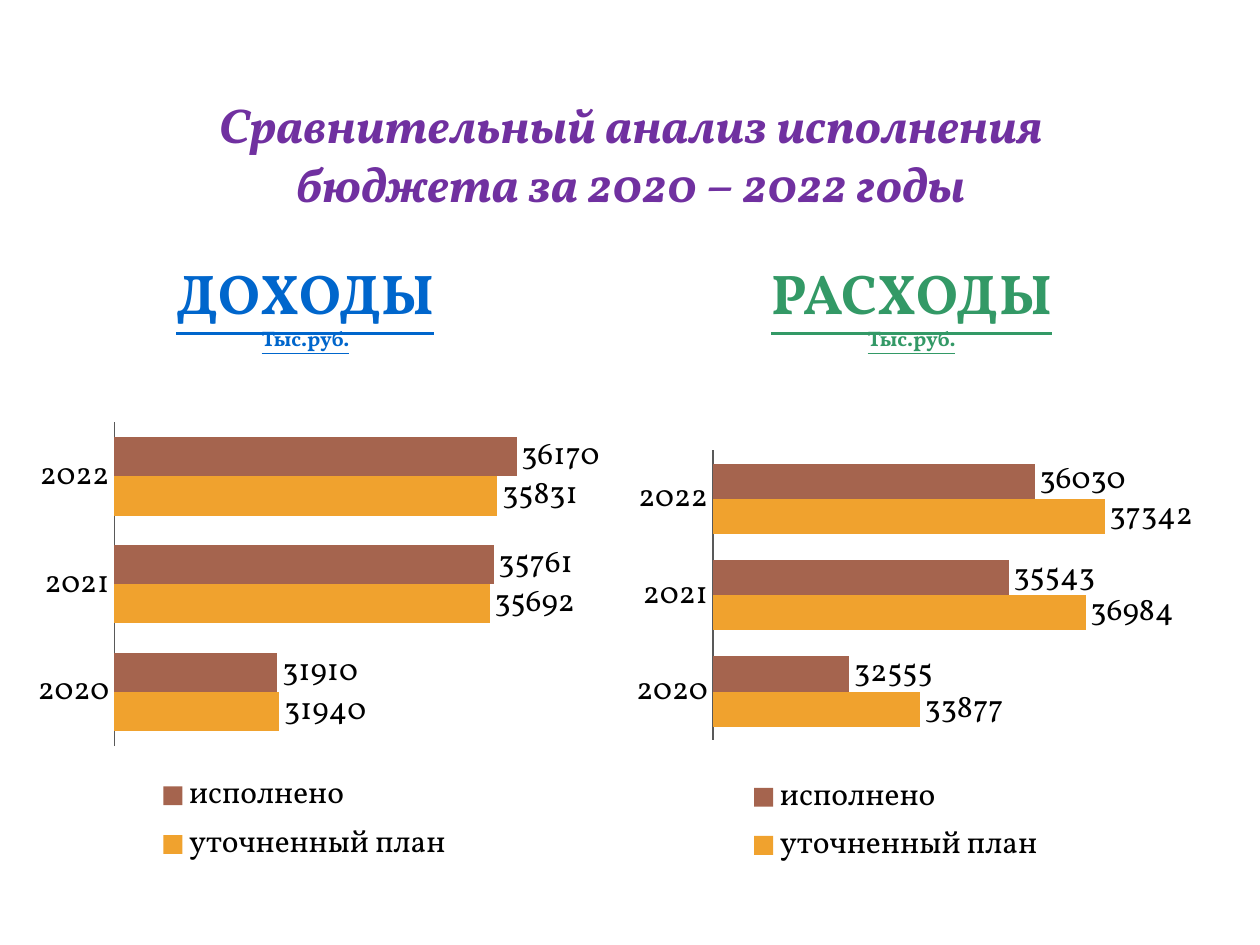
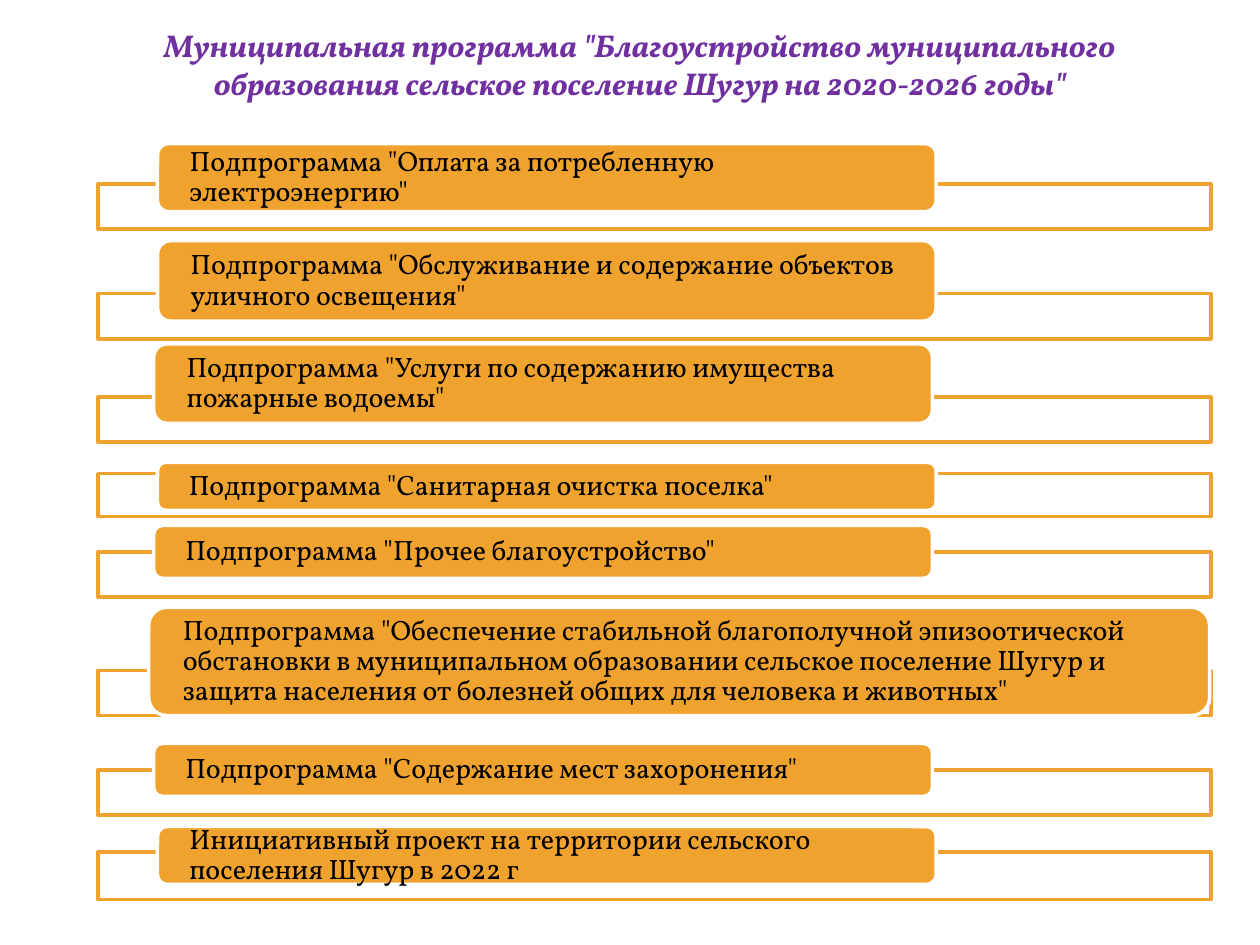
"""Budget comparison charts and the list of municipal subprogrammes."""
import lxml.etree
import pptx
import pptx.chart.data
import pptx.dml.color
import pptx.enum.chart
import pptx.enum.shapes
import pptx.enum.text
import pptx.oxml.ns
import pptx.util

COLOURS = {"title": "7030A0", "income": "0066CC", "spending": "339966", "plan": "F0A22E",
           "actual": "A5644E", "ink": "000000", "paper": "FFFFFF", "axis": "595959"}
RGB = {name: pptx.dml.color.RGBColor.from_string(code) for name, code in COLOURS.items()}
FONT = "Vollkorn"
HEADLINE = {"bold": True, "italic": True}
SECTION = {"bold": True, "underline": True}
CENTRE = pptx.enum.text.PP_ALIGN.CENTER
qn = pptx.oxml.ns.qn

deck = pptx.Presentation()
deck.slide_width, deck.slide_height = pptx.util.Inches(10), pptx.util.Inches(7.5)
COLUMN, ROW = deck.slide_width / 100, deck.slide_height / 75


def cells(column, row, columns, rows):
    return [round(n * unit) for n, unit in zip((column, row, columns, rows), (COLUMN, ROW) * 2)]


def write(frame, lines, colour, style, align):
    frame.word_wrap = True
    for number, (wording, size) in enumerate(lines):
        paragraph = frame.add_paragraph() if number else frame.paragraphs[0]
        paragraph.alignment = align
        font = paragraph.add_run().font
        paragraph.runs[0].text = wording
        for key, value in {"name": FONT, "size": pptx.util.Pt(size), **style}.items():
            setattr(font, key, value)
        font.color.rgb = RGB[colour]


comparison, programme = [deck.slides.add_slide(deck.slide_layouts[6]) for _ in range(2)]

headlines = [
    (comparison, (9.4, 7, 81.3, 10.4), 28,
     "Сравнительный анализ исполнения бюджета за 2020 – 2022 годы"),
    (programme, (8.6, 1.6, 84.4, 7.1), 18,
     'Муниципальная программа "Благоустройство муниципального образования '
     'сельское поселение Шугур на 2020-2026 годы"'),
]
for slide, area, size, wording in headlines:
    headline = slide.shapes.add_textbox(*cells(*area))
    write(headline.text_frame, [(wording, size)], "title", HEADLINE, CENTRE)

budget_sides = [
    {"heading": "ДОХОДЫ", "colour": "income", "heading_area": (10.2, 20, 28.1, 9.4),
     "chart_area": (2.3, 32.8, 45.3, 36.7), "scale": (29000, 37000),
     "plan": (31940, 35692, 35831), "actual": (31910, 35761, 36170),
     "plot": (0.15, 0.02, 0.79, 0.7), "legend": (0.22, 0.77, 0.53, 0.22)},
    {"heading": "РАСХОДЫ", "colour": "spending", "heading_area": (56.3, 20, 32.1, 9.4),
     "chart_area": (46.9, 33.6, 48.4, 35.9), "scale": (30000, 38000),
     "plan": (33877, 36984, 37342), "actual": (32555, 35543, 36030),
     "plot": (0.2, 0.06, 0.7, 0.64), "legend": (0.25, 0.77, 0.5, 0.22)},
]
for side in budget_sides:
    figures = pptx.chart.data.CategoryChartData()
    figures.categories = ["2020", "2021", "2022"]
    figures.add_series("уточненный план", side["plan"])
    figures.add_series("исполнено", side["actual"])
    chart = comparison.shapes.add_chart(
        pptx.enum.chart.XL_CHART_TYPE.BAR_CLUSTERED, *cells(*side["chart_area"]), figures).chart
    chart.has_title = False
    chart.font.name, chart.font.size = FONT, pptx.util.Pt(18)
    chart.font.color.rgb = RGB["ink"]

    years, amounts = chart.category_axis, chart.value_axis
    years.major_tick_mark = pptx.enum.chart.XL_TICK_MARK.NONE
    years.format.line.color.rgb = RGB["axis"]
    amounts.minimum_scale, amounts.maximum_scale = side["scale"]
    amounts.has_major_gridlines = amounts.visible = False

    bars = chart.plots[0]
    bars.gap_width, bars.overlap, bars.vary_by_categories = 75, 0, False
    bars.has_data_labels = True
    bars.data_labels.show_value = True
    bars.data_labels.position = pptx.enum.chart.XL_LABEL_POSITION.OUTSIDE_END
    for series, colour in zip(bars.series, ("plan", "actual")):
        series.format.fill.solid()
        series.format.fill.fore_color.rgb = RGB[colour]

    chart.has_legend = True
    chart.legend.position = pptx.enum.chart.XL_LEGEND_POSITION.BOTTOM
    chart.legend.include_in_layout = False
    for part, tag, index in (("plot", "c:plotArea", 0), ("legend", "c:legend", 1)):
        host = next(chart.element.iter(qn(tag)))
        for automatic in host.findall(qn("c:layout")):
            host.remove(automatic)
        layout = lxml.etree.Element(qn("c:layout"))
        manual = lxml.etree.SubElement(layout, qn("c:manualLayout"))
        settings = [("xMode", "edge"), ("yMode", "edge"), *zip("xywh", side[part])]
        if part == "plot":
            settings.insert(0, ("layoutTarget", "inner"))
        for key, value in settings:
            lxml.etree.SubElement(manual, qn(f"c:{key}")).set("val", str(value))
        host.insert(index, layout)

    heading = comparison.shapes.add_textbox(*cells(*side["heading_area"]))
    write(heading.text_frame, [(side["heading"], 32), ("Тыс.руб.", 12)],
          side["colour"], SECTION, CENTRE)

subprogrammes = [
    ('Подпрограмма "Оплата за потребленную электроэнергию"',
     (14.6, 3.6), (12.5, 11.4, 61.8, 5.4)),
    ('Подпрограмма "Обслуживание и содержание объектов уличного освещения"',
     (23.3, 3.6), (12.5, 19.1, 61.8, 6.4)),
    ('Подпрограмма "Услуги по содержанию имущества пожарные водоемы"',
     (31.5, 3.6), (12.2, 27.3, 61.8, 6.3)),
    ('Подпрограмма "Санитарная очистка поселка"',
     (37.6, 3.4), (12.5, 36.7, 61.8, 3.8)),
    ('Подпрограмма "Прочее благоустройство"',
     (43.8, 3.6), (12.2, 41.7, 61.8, 4.2)),
    ('Подпрограмма "Обеспечение стабильной благополучной эпизоотической обстановки '
     'в муниципальном образовании сельское поселение Шугур и защита населения '
     'от болезней общих для человека и животных"',
     (53.2, 3.6), (11.8, 48.2, 84.2, 8.6)),
    ('Подпрограмма "Содержание мест захоронения"',
     (61.1, 3.6), (12.2, 59, 61.8, 4.2)),
    ('Инициативный проект на территории сельского поселения Шугур в 2022 г',
     (67.6, 3.8), (12.5, 65.6, 61.8, 4.6)),
]
SHAPES = pptx.enum.shapes.MSO_SHAPE
CARD_TEXT = {"margin_left": round(2.3 * COLUMN), "margin_right": round(2.3 * COLUMN),
             "margin_top": 0, "margin_bottom": 0,
             "vertical_anchor": pptx.enum.text.MSO_ANCHOR.MIDDLE}
for wording, (row, rows), card_area in subprogrammes:
    frame = programme.shapes.add_shape(SHAPES.RECTANGLE, *cells(7.8, row, 88.3, rows))
    card = programme.shapes.add_shape(SHAPES.ROUNDED_RECTANGLE, *cells(*card_area))
    for shape, fill, line in ((frame, "paper", "plan"), (card, "plan", "paper")):
        shape.shadow.inherit = False
        shape.fill.solid()
        shape.fill.fore_color.rgb = RGB[fill]
        shape.line.color.rgb = RGB[line]
        shape.line.width = pptx.util.Pt(2)
    tint = next(frame.element.iter(qn("a:srgbClr")))
    lxml.etree.SubElement(tint, qn("a:alpha")).set("val", "90000")
    for key, value in CARD_TEXT.items():
        setattr(card.text_frame, key, value)
    write(card.text_frame, [(wording, 16)], "ink", {}, pptx.enum.text.PP_ALIGN.LEFT)
    card.text_frame.paragraphs[0].line_spacing = 0.9

deck.save("out.pptx")
